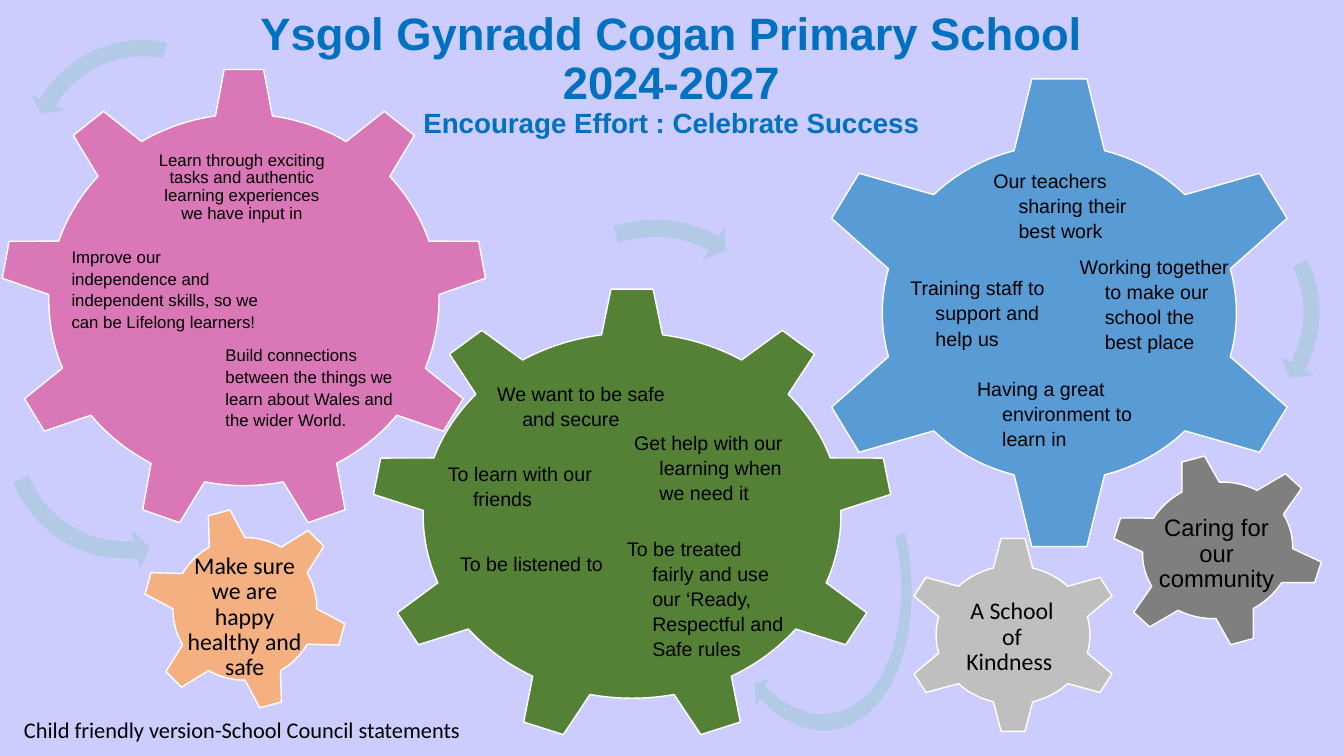
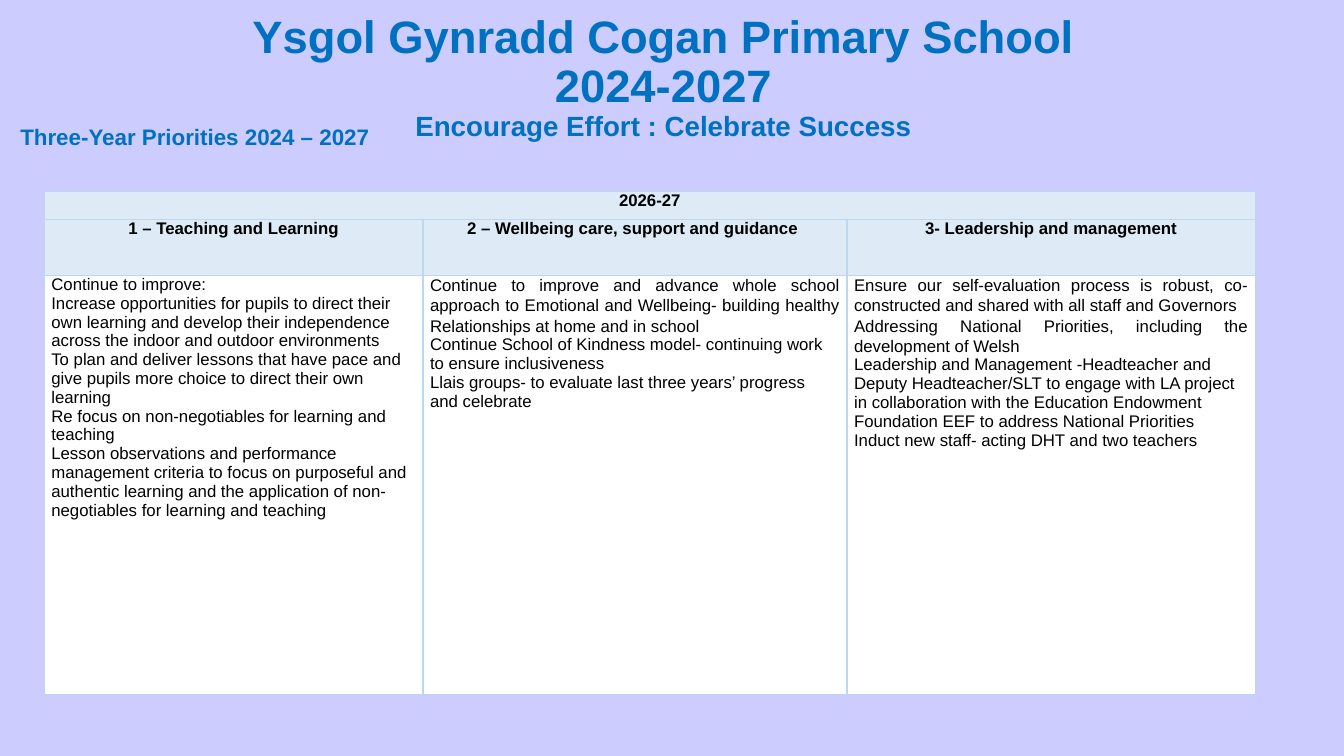
import math
from dataclasses import dataclass, replace
from typing import NamedTuple

import lxml.etree
import pptx
import pptx.dml.color
import pptx.enum.shapes
import pptx.enum.text
import pptx.oxml.ns
import pptx.presentation
import pptx.shapes.autoshape
import pptx.slide
import pptx.table
import pptx.text.text
import pptx.util

Pt = pptx.util.Pt
Align = pptx.enum.text.PP_ALIGN
Anchor = pptx.enum.text.MSO_ANCHOR
Preset = pptx.enum.shapes.MSO_SHAPE
Point = tuple[float, float]


# Theme
@dataclass(frozen=True)
class Theme:
    background: str = "CCCCFF"
    heading: str = "0070C0"
    text: str = "000000"
    white: str = "FFFFFF"
    arrow: str = "B3CAE7"
    pink: str = "DA78B7"
    blue: str = "599BD5"
    green: str = "548135"
    orange: str = "F4B081"
    light_grey: str = "BFBFBF"
    dark_grey: str = "7F7F7F"
    table_border: str = "BDD7EE"
    table_head: str = "DEEBF6"
    main_font: str = "Arial"
    second_font: str = "Calibri"
    title_size: float = 32.4
    motto_size: float = 19.8
    label_size: float = 17
    caption_size: float = 16
    statement_size: float = 14
    small_size: float = 12


THEME = Theme()


@dataclass(frozen=True)
class TextStyle:
    size: float
    font: str = THEME.main_font
    color: str = THEME.text
    bold: bool = False
    align: Align = Align.LEFT
    spacing: float = 1.0
    after: float = 0
    hanging: float = 0
    anchor: Anchor = Anchor.TOP
    inset: Point = (7.2, 3.6)


TITLE = TextStyle(THEME.title_size, color=THEME.heading, bold=True,
                  align=Align.CENTER, spacing=0.9, anchor=Anchor.BOTTOM)
CAPTION = TextStyle(THEME.caption_size, THEME.second_font)
SUBHEAD = TextStyle(THEME.caption_size, color=THEME.heading, bold=True,
                    align=Align.CENTER, spacing=1.07, after=8)
LABEL = TextStyle(THEME.label_size, THEME.second_font, align=Align.CENTER,
                  spacing=0.89, anchor=Anchor.MIDDLE, inset=(1.5, 1.5))
SIDE_LABEL = replace(LABEL, font=THEME.main_font)
SMALL_LABEL = replace(SIDE_LABEL, size=THEME.small_size)
PLAIN = TextStyle(THEME.small_size, spacing=1.07, after=8)
STATEMENT = TextStyle(THEME.statement_size, spacing=1.07, after=8, hanging=18,
                      anchor=Anchor.MIDDLE, inset=(1.5, 1.5))
CELL = TextStyle(THEME.small_size, inset=(5, 0))
CELL_HEAD = replace(CELL, bold=True, align=Align.CENTER)
CELL_JUSTIFIED = replace(CELL, align=Align.JUSTIFY, spacing=1.07)


# Content records, all lengths in points
class Rect(NamedTuple):
    left: float
    top: float
    width: float
    height: float


class Note(NamedTuple):
    text: str
    rect: Rect
    style: TextStyle = STATEMENT


class Gear(NamedTuple):
    rect: Rect
    color: str
    teeth: int = 6
    depth: float = 0.15
    inset: float = 0.035
    turn: float = 0


class Arrow(NamedTuple):
    rect: Rect
    turn: float
    preset: Preset


class Column(NamedTuple):
    heading: str
    width: float
    justified: int
    items: list[str]


TITLE_TEXT = ("Ysgol Gynradd Cogan Primary School\v2024-2027\v"
              "Encourage Effort : Celebrate Success")

GEARS = [
    Gear(Rect(0, 48.2, 348.5, 331.9), THEME.pink, 9, 0.1, 0.018),
    Gear(Rect(576, 52.4, 361.4, 342), THEME.blue),
    Gear(Rect(265, 205.2, 373, 326.2), THEME.green, 9, 0.1, 0.018),
    Gear(Rect(101.5, 362.2, 146.9, 145.4), THEME.orange, turn=-15),
    Gear(Rect(645.1, 383, 157, 141.1), THEME.light_grey),
    Gear(Rect(792.7, 324, 154.1, 138.2), THEME.dark_grey, turn=-15),
]

# Band width, head angle, end angle, start angle, half head width
ARROW_ADJUSTMENTS = {
    Preset.CIRCULAR_ARROW: (5984, 394124, 13313824, 10508221, 6981),
    Preset.LEFT_CIRCULAR_ARROW: (6452, 429999, 10489124, 14837806, 7527),
}
ARROWS = [
    Arrow(Rect(-6.5, 216, 192.2, 190.1), 270, Preset.LEFT_CIRCULAR_ARROW),
    Arrow(Rect(365, 149.8, 206.6, 204.5), 76.1, Preset.CIRCULAR_ARROW),
    Arrow(Rect(10.1, 20.2, 180, 183.6), 35.8, Preset.LEFT_CIRCULAR_ARROW),
    Arrow(Rect(735.1, 132.5, 216.7, 194.4), 158.9, Preset.CIRCULAR_ARROW),
]
# The flattened arrow: one curved side, the head, the other side back
SWOOSH_SIDE = [(646.6, 380.9), (657.4, 428.4), (649.4, 477.4), (626.4, 503.3),
               (603.4, 529.9), (570.2, 527.8), (542.9, 499)]
SWOOSH_HEAD = [(540, 504.7), (539.3, 488.2), (549.4, 484.6)]
SWOOSH_BACK = [(546.5, 490.3), (571.7, 515.5), (601.2, 517), (622.1, 493.2),
               (642.2, 469.4), (649.4, 425.5), (639.4, 383)]

NOTES = [
    Note("Learn through exciting tasks and authentic learning experiences we have input in",
         Rect(110.2, 88.3, 125.3, 91.4), SMALL_LABEL),
    Note("Make sure we are happy healthy and safe",
         Rect(129.4, 385.9, 90.7, 110.2), LABEL),
    Note("A School of Kindness ", Rect(684, 420.5, 77.8, 69.8), LABEL),
    Note("Caring for our community", Rect(825.8, 357.1, 86.4, 77.8), SIDE_LABEL),
    Note("Child friendly version-School Council statements",
         Rect(10, 508.3, 352.8, 26.6), CAPTION),
    Note("Build connections between the things we learn about Wales and the wider World.",
         Rect(154, 242, 141.8, 68.4), PLAIN),
    Note("Improve our independence and independent skills, so we can be Lifelong learners!",
         Rect(44, 171.8, 154, 69.8), PLAIN),
    Note("We want to be safe and secure", Rect(335.6, 261.2, 151.9, 56.9)),
    Note("To learn with our friends", Rect(300.4, 318.2, 133.2, 56.9)),
    Note("Get help with our learning when we need it", Rect(433.5, 305.2, 133.2, 56.9)),
    Note("To be listened to", Rect(309.1, 373.7, 133.2, 56.9)),
    Note("To be treated fairly and use our ‘Ready, Respectful and Safe rules",
         Rect(428.4, 391.7, 133.2, 70.6)),
    Note("Our teachers sharing their best work", Rect(690, 118, 133.2, 56.9)),
    Note("Training staff to support and help us", Rect(630.7, 194.6, 133.2, 56.9)),
    Note("Working together to make our school the best place",
         Rect(751.7, 188.1, 133.2, 56.9)),
    Note("Having a great environment to learn in", Rect(678.4, 266.6, 133.2, 56.9)),
]

COLUMNS = [
    Column("1 – Teaching and Learning", 270.5, 0, [
        "Continue to improve:",
        "Increase opportunities for pupils to direct their own learning and develop their independence across the indoor and outdoor environments",
        "To plan and deliver lessons that have pace and give pupils more choice to direct their own learning",
        "Re focus on non-negotiables for learning and teaching",
        "Lesson observations and performance management criteria to focus on purposeful and authentic learning and the application of non-negotiables for learning and teaching"]),
    Column("2 – Wellbeing care, support and guidance ", 302.9, 1, [
        "Continue to improve and advance whole school approach to Emotional and Wellbeing- building healthy Relationships at home and in school",
        "Continue School of Kindness model- continuing work to ensure inclusiveness",
        "Llais groups- to evaluate last three years’ progress\vand celebrate"]),
    Column("3- Leadership and management", 291.6, 2, [
        "Ensure our self-evaluation process is robust, co-constructed and shared with all staff and Governors",
        "Addressing National Priorities, including the development of Welsh ",
        "Leadership and Management -Headteacher and Deputy Headteacher/SLT to engage with LA project in collaboration with the Education Endowment Foundation EEF to address National Priorities",
        "Induct new staff- acting DHT and two teachers"]),
]
ROW_HEIGHTS = (20, 39.8, 299.5)


# Text
def rgb(color: str) -> pptx.dml.color.RGBColor:
    return pptx.dml.color.RGBColor.from_string(color)


def format_para(para: pptx.text.text._Paragraph, style: TextStyle) -> None:
    para.alignment = style.align
    para.line_spacing = style.spacing
    para.space_after = Pt(style.after)
    if style.hanging:
        properties = para._p.get_or_add_pPr()
        properties.set("marL", str(Pt(2 * style.hanging)))
        properties.set("indent", str(-Pt(style.hanging)))
    for span in para.runs:
        span.font.size = Pt(style.size)
        span.font.name = style.font
        span.font.bold = style.bold
        span.font.color.rgb = rgb(style.color)
    for line_break in para._p.findall(pptx.oxml.ns.qn("a:br")):
        lxml.etree.SubElement(line_break, pptx.oxml.ns.qn("a:rPr"),
                              sz=str(round(style.size * 100)))


def fill_frame(frame: pptx.text.text.TextFrame, text: str, style: TextStyle) -> None:
    frame.word_wrap = True
    frame.auto_size = pptx.enum.text.MSO_AUTO_SIZE.NONE
    frame.vertical_anchor = style.anchor
    frame.margin_left = frame.margin_right = Pt(style.inset[0])
    frame.margin_top = frame.margin_bottom = Pt(style.inset[1])
    frame.text = text
    format_para(frame.paragraphs[0], style)


def add_note(page: pptx.slide.Slide, note: Note) -> None:
    box = page.shapes.add_textbox(*map(Pt, note.rect))
    fill_frame(box.text_frame, note.text, note.style)


def add_page(deck: pptx.presentation.Presentation, title: Rect) -> pptx.slide.Slide:
    page = deck.slides.add_slide(deck.slide_layouts.get_by_name("Title Only"))
    box = page.shapes.title
    box.left, box.top, box.width, box.height = map(Pt, title)
    fill_frame(box.text_frame, TITLE_TEXT, TITLE)
    box.text_frame.paragraphs[0].runs[-1].font.size = Pt(THEME.motto_size)
    return page


# Gears and arrows
def paint(shape: pptx.shapes.autoshape.Shape, color: str) -> None:
    shape.shadow.inherit = False
    shape.fill.solid()
    shape.fill.fore_color.rgb = rgb(color)
    shape.line.fill.background()


def add_outline(page: pptx.slide.Slide, points: list[Point],
                color: str) -> pptx.shapes.autoshape.Shape:
    corners = [(Pt(x), Pt(y)) for x, y in points]
    builder = page.shapes.build_freeform(*corners[0])
    builder.add_line_segments(corners[1:], close=True)
    shape = builder.convert_to_shape()
    paint(shape, color)
    return shape


def add_gear(page: pptx.slide.Slide, gear: Gear) -> None:
    """A round gear of size 1, stretched to its rectangle and then turned."""
    radius = 0.5 - gear.depth
    half = math.atan((gear.depth + gear.inset) / 2 / radius)
    step = math.tau / gear.teeth
    tip = math.hypot(radius * math.cos(half) + gear.depth,
                     radius * math.sin(half) - gear.inset)
    tip_half = math.asin((radius * math.sin(half) - gear.inset) / tip)
    polar = []
    for tooth in range(gear.teeth):
        middle = tooth * step - math.pi / 2
        polar += [(tip, middle - tip_half), (tip, middle + tip_half)]
        gap = step - 2 * half
        polar += [(radius, middle + half + gap * part / 12) for part in range(13)]
    left, top, width, height = gear.rect
    cos, sin = math.cos(math.radians(gear.turn)), math.sin(math.radians(gear.turn))
    points = []
    for distance, angle in polar:
        x, y = width * distance * math.cos(angle), height * distance * math.sin(angle)
        points.append((left + width / 2 + x * cos - y * sin,
                       top + height / 2 + x * sin + y * cos))
    shape = add_outline(page, points, gear.color)
    shape.line.color.rgb = rgb(THEME.white)
    shape.line.width = Pt(1)


def add_arrow(page: pptx.slide.Slide, arrow: Arrow) -> None:
    shape = page.shapes.add_shape(arrow.preset, *map(Pt, arrow.rect))
    shape.rotation = arrow.turn
    for index, value in enumerate(ARROW_ADJUSTMENTS[arrow.preset]):
        shape.adjustments[index] = value / 100000
    paint(shape, THEME.arrow)


def curve(controls: list[Point], parts: int = 12) -> list[Point]:
    """Points along a chain of cubic curves."""
    points = [controls[0]]
    for first in range(0, len(controls) - 1, 3):
        for part in range(1, parts + 1):
            t = part / parts
            weights = [math.comb(3, i) * t**i * (1 - t)**(3 - i) for i in range(4)]
            piece = list(zip(weights, controls[first:first + 4]))
            points.append((sum(w * x for w, (x, _) in piece),
                           sum(w * y for w, (_, y) in piece)))
    return points


# Table
def fill_cell(cell: pptx.table._Cell, texts: list[str], styles: list[TextStyle],
              color: str) -> None:
    cell.margin_left = cell.margin_right = Pt(CELL.inset[0])
    cell.margin_top = cell.margin_bottom = Pt(CELL.inset[1])
    cell.text_frame.text = "\n".join(texts)
    for para, style in zip(cell.text_frame.paragraphs, styles):
        format_para(para, style)
    qn = pptx.oxml.ns.qn
    for side in ("a:lnL", "a:lnR", "a:lnT", "a:lnB"):
        border = lxml.etree.SubElement(cell._tc.get_or_add_tcPr(), qn(side), w=str(Pt(1)))
        solid = lxml.etree.SubElement(border, qn("a:solidFill"))
        lxml.etree.SubElement(solid, qn("a:srgbClr"), val=THEME.table_border)
    cell.fill.solid()
    cell.fill.fore_color.rgb = rgb(color)


def add_priorities(page: pptx.slide.Slide) -> None:
    rect = Rect(31.7, 136.8, sum(c.width for c in COLUMNS), sum(ROW_HEIGHTS))
    table = page.shapes.add_table(len(ROW_HEIGHTS), len(COLUMNS), *map(Pt, rect)).table
    table.first_row = table.horz_banding = False
    for row, height in zip(table.rows, ROW_HEIGHTS):
        row.height = Pt(height)
    table.cell(0, 0).merge(table.cell(0, len(COLUMNS) - 1))
    for index, column in enumerate(COLUMNS):
        table.columns[index].width = Pt(column.width)
        year = ["2026-27"] if index == 0 else []
        fill_cell(table.cell(0, index), year, [CELL_HEAD], THEME.table_head)
        fill_cell(table.cell(1, index), [column.heading], [CELL_HEAD], THEME.table_head)
        styles = [CELL_JUSTIFIED if i < column.justified else CELL
                  for i in range(len(column.items))]
        fill_cell(table.cell(2, index), column.items, styles, THEME.white)


def main() -> None:
    deck = pptx.Presentation()
    deck.slide_width, deck.slide_height = Pt(960), Pt(540)
    background = deck.slide_master.background.fill
    background.solid()
    background.fore_color.rgb = rgb(THEME.background)

    # Gears page
    page = add_page(deck, Rect(102.2, 28.1, 754.6, 74.9))
    for arrow in ARROWS:
        add_arrow(page, arrow)
    add_outline(page, curve(SWOOSH_SIDE) + SWOOSH_HEAD + curve(SWOOSH_BACK), THEME.arrow)
    for gear in GEARS:
        add_gear(page, gear)
    for note in NOTES:
        add_note(page, note)

    # Priorities page
    page = add_page(deck, Rect(96.5, 30.6, 754.6, 74.9))
    add_note(page, Note("Three-Year Priorities 2024 – 2027",
                        Rect(5.6, 83.2, 267.1, 26.6), SUBHEAD))
    add_priorities(page)
    deck.save("out.pptx")


if __name__ == "__main__":
    main()
